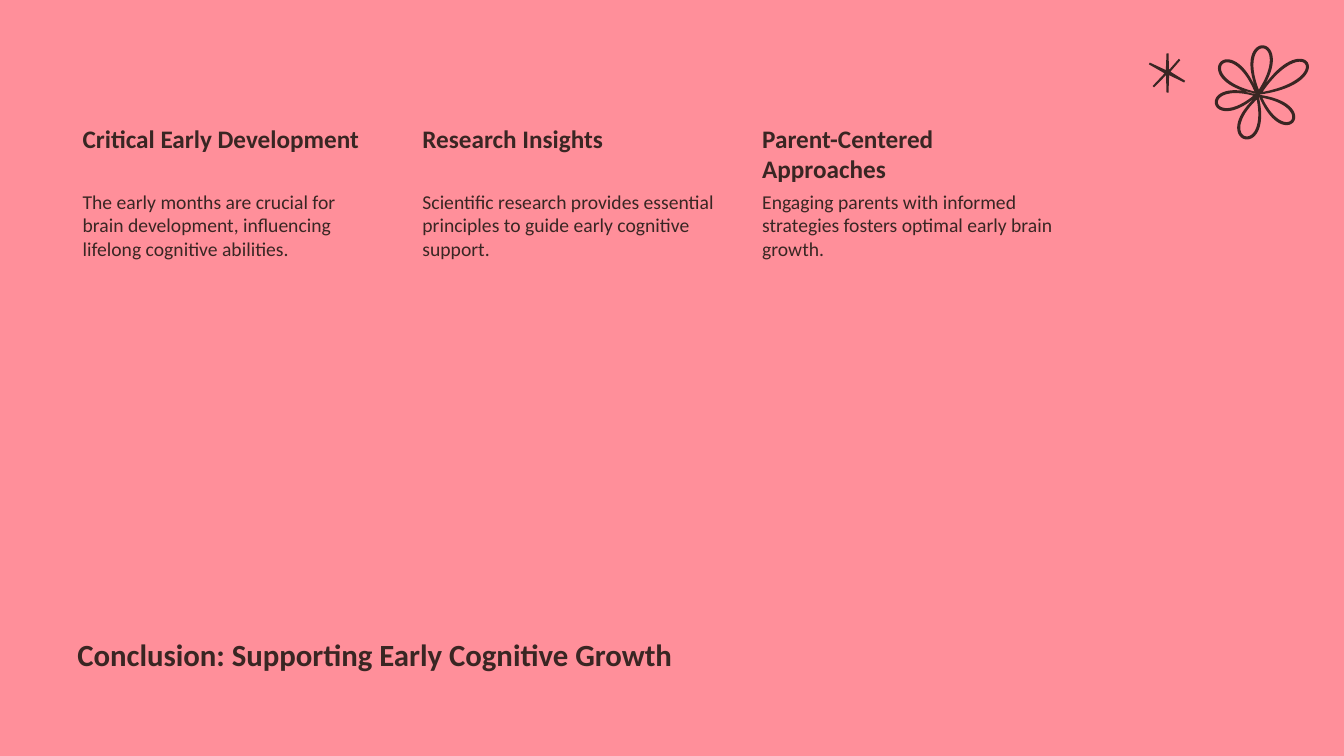
from math import atan2, cos, hypot, pi, sin

from pptx import Presentation
from pptx.dml.color import RGBColor
from pptx.enum.text import MSO_ANCHOR
from pptx.util import Inches

from pptx.util import Pt

HUES = {"back": "FF8F9A", "ink": "392623"}
INK = RGBColor.from_string(HUES["ink"])

deck = Presentation()
deck.slide_width, deck.slide_height = Inches(13.33), Inches(7.5)
slide = deck.slides.add_slide(deck.slide_layouts[6])
slide.background.fill.solid()
slide.background.fill.fore_color.rgb = RGBColor.from_string(HUES["back"])


def add_text(text, left, top, width, height, size, bold):
    box = slide.shapes.add_textbox(
        Inches(left), Inches(top), Inches(width), Inches(height))
    frame = box.text_frame
    frame.word_wrap = True
    frame.text = text
    font = frame.paragraphs[0].runs[0].font
    font.name, font.size, font.bold = "Calibri", Pt(size), bold
    font.color.rgb = INK
    return frame


def add_doodle(loops):
    loops = [[(Inches(x), Inches(y)) for x, y in loop] for loop in loops]
    pen = slide.shapes.build_freeform(*loops[0][0])
    for index, loop in enumerate(loops):
        if index:
            pen.move_to(*loop[0])
        pen.add_line_segments(loop[1:], close=True)
    doodle = pen.convert_to_shape()
    doodle.shadow.inherit = False
    doodle.fill.solid()
    doodle.fill.fore_color.rgb = INK
    doodle.line.fill.background()


# Flower: six teardrop petals (tip x, tip y, half width), each with a hole
MID_X, MID_Y = 12.48, 0.94
PETALS = [
    (12.53, 0.45, 0.11), (12.97, 0.62, 0.11), (12.83, 1.21, 0.1),
    (12.34, 1.38, 0.11), (12.05, 1.03, 0.1), (12.1, 0.62, 0.11),
]
STEPS = 48
loops = []
for tip_x, tip_y, half in PETALS:
    reach = hypot(tip_x - MID_X, tip_y - MID_Y)
    turn = atan2(tip_y - MID_Y, tip_x - MID_X)
    for start, end, wide in [(0, reach, half),
                             (0.05, reach - 0.03, half - 0.03)]:
        loop = []
        for step in range(STEPS):
            t = 2 * pi * step / STEPS
            along = start + (end - start) * (1 - cos(t)) / 2
            side = wide / 0.77 * sin(t) * sin(t / 2)
            loop.append((MID_X + along * cos(turn) - side * sin(turn),
                         MID_Y + along * sin(turn) + side * cos(turn)))
        loops.append(loop)
add_doodle(loops)

# Star: six blunt rays, in order round the centre
HUB_X, HUB_Y = 11.58, 0.72
TIPS = [(11.58, 0.53), (11.7, 0.59), (11.75, 0.81),
        (11.58, 0.92), (11.44, 0.86), (11.4, 0.63)]
star = []
for tip_x, tip_y in TIPS:
    turn = atan2(tip_y - HUB_Y, tip_x - HUB_X)
    for side in (-0.01, 0.01):
        star.append((tip_x - side * sin(turn), tip_y + side * cos(turn)))
    star.append((HUB_X + 0.03 * cos(turn + pi / 6),
                 HUB_Y + 0.03 * sin(turn + pi / 6)))
add_doodle([star])

# Title
title = add_text("Conclusion: Supporting Early Cognitive Growth",
                 0.67, 6.2, 9.8, 0.51, 22, True)
title.vertical_anchor = MSO_ANCHOR.MIDDLE
title.paragraphs[0].line_spacing = 1.2

# Three columns, each a heading above its text
COLUMNS = [
    ("Critical Early Development",
     "The early months are crucial for brain development, "
     "influencing lifelong cognitive abilities."),
    ("Research Insights",
     "Scientific research provides essential principles "
     "to guide early cognitive support."),
    ("Parent-Centered Approaches",
     "Engaging parents with informed strategies fosters "
     "optimal early brain growth."),
]
for index, (head, body) in enumerate(COLUMNS):
    left = 0.67 + 3.37 * index
    for text, top, height, size, bold in [
            (head, 1.2, 0.66, 18, True), (body, 1.86, 3.79, 14, False)]:
        frame = add_text(text, left, top, 3.06, height, size, bold)
        frame.margin_left, frame.margin_right = Inches(0.15), Inches(0)
        frame.margin_top = frame.margin_bottom = Inches(0.02)

deck.save("out.pptx")
